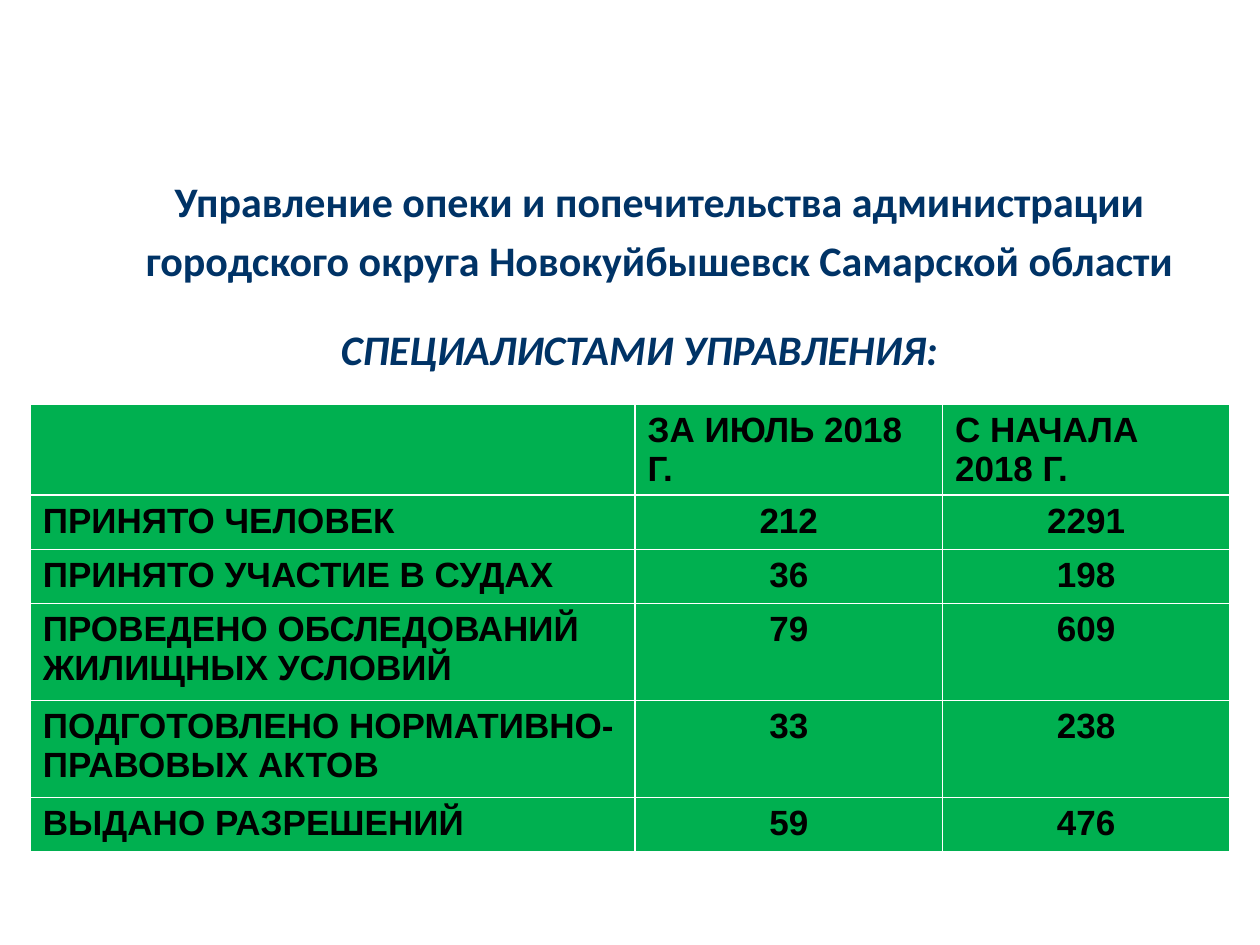
from pptx import Presentation
from pptx import util as u
from pptx.dml import color
from pptx.enum import text

NAVY, GREEN, BLACK = "003366", "00B050", "000000"
HEADING = {"name": "Calibri", "size": u.Pt(24), "bold": True}
CELL = {"name": "Arial", "size": u.Pt(20), "bold": True}

TITLE = [
    "Управление опеки и попечительства администрации",
    "городского округа Новокуйбышевск Самарской области",
]
SUBTITLE = ["СПЕЦИАЛИСТАМИ УПРАВЛЕНИЯ:"]
COLUMN_WIDTHS = [4.8, 2.44, 2.28]
ROWS = [
    (0.72, ["", "ЗА ИЮЛЬ 2018 Г.", "С НАЧАЛА 2018 Г."]),
    (0.43, ["ПРИНЯТО ЧЕЛОВЕК", "212", "2291"]),
    (0.43, ["ПРИНЯТО УЧАСТИЕ В СУДАХ", "36", "198"]),
    (0.77, ["ПРОВЕДЕНО ОБСЛЕДОВАНИЙ ЖИЛИЩНЫХ УСЛОВИЙ", "79", "609"]),
    (0.77, ["ПОДГОТОВЛЕНО НОРМАТИВНО-ПРАВОВЫХ АКТОВ", "33", "238"]),
    (0.43, ["ВЫДАНО РАЗРЕШЕНИЙ", "59", "476"]),
]


def inches(*lengths):
    """Convert several lengths to inches."""
    return [u.Inches(length) for length in lengths]


def paint(target, shade):
    """Set a colour format from a hex string."""
    target.rgb = color.RGBColor.from_string(shade)


def style(para, values, shade, align):
    """Apply font values, colour and alignment to a paragraph."""
    para.alignment = align
    for name, value in values.items():
        setattr(para.font, name, value)
    paint(para.font.color, shade)


def fill_heading(shape, box, lines, values):
    """Place a heading shape in its box and write its centred lines."""
    for name, value in zip(("left", "top", "width", "height"), inches(*box)):
        setattr(shape, name, value)
    frame = shape.text_frame
    frame.word_wrap = True
    frame.auto_size = text.MSO_AUTO_SIZE.NONE
    frame.vertical_anchor = text.MSO_ANCHOR.MIDDLE
    frame.text = "\n".join(lines)
    for index, para in enumerate(frame.paragraphs):
        style(para, values, NAVY, text.PP_ALIGN.CENTER)
        para.space_before = u.Pt(4.8 if index else 0)


def add_report(page, box):
    """Add the table of results in its box."""
    table = page.shapes.add_table(len(ROWS), len(COLUMN_WIDTHS), *inches(*box)).table
    for column, width in zip(table.columns, COLUMN_WIDTHS):
        column.width = u.Inches(width)
    for row, (height, values) in zip(table.rows, ROWS):
        row.height = u.Inches(height)
        for cell, value in zip(row.cells, values):
            cell.text = value
            cell.fill.solid()
            paint(cell.fill.fore_color, GREEN)
            align = text.PP_ALIGN.CENTER if value.isdigit() else text.PP_ALIGN.LEFT
            style(cell.text_frame.paragraphs[0], CELL, BLACK, align)


def main():
    """Build and save the slide."""
    deck = Presentation()
    deck.slide_width, deck.slide_height = inches(10, 7.5)
    page = deck.slides.add_slide(deck.slide_layouts[5])
    fill_heading(page.shapes.title, (0.51, 1.39, 9.45, 0.87), TITLE, HEADING)
    add_report(page, (0.24, 3.21, sum(COLUMN_WIDTHS), sum(row[0] for row in ROWS)))
    subtitle_box = (0.35, 2.33, 9.45, 0.87)
    subtitle = page.shapes.add_textbox(*inches(*subtitle_box))
    fill_heading(subtitle, subtitle_box, SUBTITLE, HEADING | {"italic": True})
    deck.save("out.pptx")


if __name__ == "__main__":
    main()
